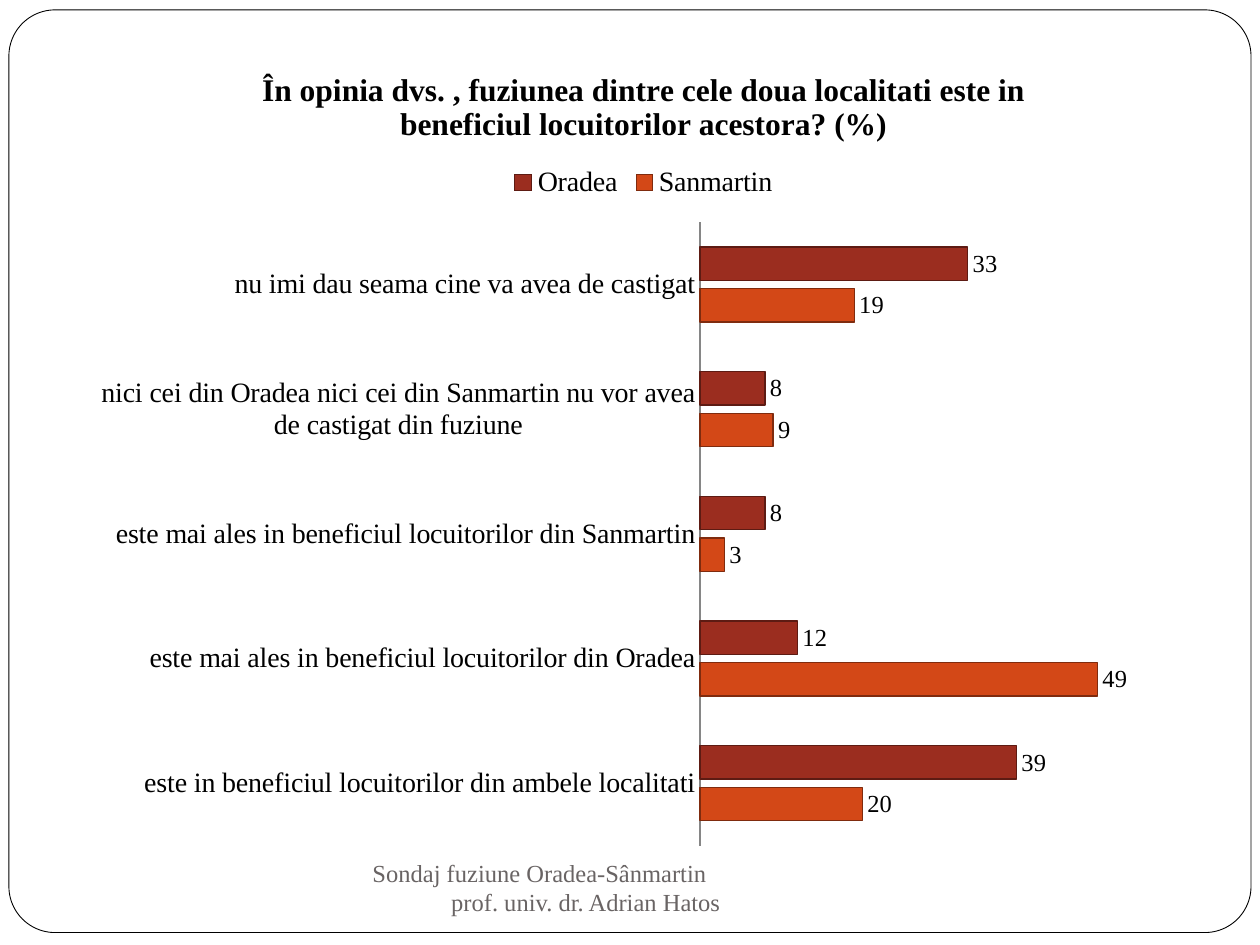
from lxml import etree
from pptx import Presentation
from pptx import util as u
from pptx.chart import data as chart_data
from pptx.dml.color import RGBColor
from pptx.enum import chart as ch
from pptx.enum import shapes, text
from pptx.oxml import ns

FONT = "Times New Roman"
BLACK = RGBColor(0x00, 0x00, 0x00)
WHITE = RGBColor(0xFF, 0xFF, 0xFF)
GREY = RGBColor(0x69, 0x64, 0x64)
AXIS_GREY = RGBColor(0x86, 0x86, 0x86)
ORANGE = RGBColor(0xD3, 0x48, 0x17)
DARK_ORANGE = RGBColor(0x7F, 0x2B, 0x0E)
RED = RGBColor(0x9B, 0x2D, 0x1F)
DARK_RED = RGBColor(0x5D, 0x1B, 0x13)

QUESTION = ("În opinia dvs. , fuziunea dintre cele doua localitati este in "
            "beneficiul locuitorilor acestora? (%)")
ANSWERS = [
    "este in beneficiul locuitorilor din ambele localitati",
    "este mai ales in beneficiul locuitorilor din Oradea",
    "este mai ales in beneficiul locuitorilor din Sanmartin",
    "nici cei din Oradea nici cei din Sanmartin nu vor avea de castigat din fuziune",
    "nu imi dau seama cine va avea de castigat",
]
TOWNS = [
    ("Sanmartin", [20, 49, 3, 9, 19], ORANGE, DARK_ORANGE),
    ("Oradea", [39, 12, 8, 8, 33], RED, DARK_RED),
]
CREDITS = [
    ("Sondaj fuziune Oradea-Sânmartin", text.PP_ALIGN.LEFT),
    ("prof. univ. dr. Adrian Hatos", text.PP_ALIGN.CENTER),
]


def set_font(font, size, color=BLACK, bold=False):
    font.name = FONT
    font.size = u.Pt(size)
    font.bold = bold
    font.color.rgb = color


def add_frame(slide, box):
    frame = slide.shapes.add_shape(shapes.MSO_SHAPE.ROUNDED_RECTANGLE, *box)
    frame.adjustments[0] = 0.05
    frame.shadow.inherit = False
    frame.fill.solid()
    frame.fill.fore_color.rgb = WHITE
    frame.line.color.rgb = BLACK
    frame.line.width = u.Pt(0.5)


def place_plot(chart, **fractions):
    plot_area = chart.plots[0]._element.getparent()
    for old in plot_area.findall(ns.qn("c:layout")):
        plot_area.remove(old)
    layout = etree.Element(ns.qn("c:layout"))
    manual = etree.SubElement(layout, ns.qn("c:manualLayout"))
    settings = {"layoutTarget": "inner", "xMode": "edge", "yMode": "edge", **fractions}
    for tag, value in settings.items():
        etree.SubElement(manual, ns.qn(f"c:{tag}")).set("val", str(value))
    plot_area.insert(0, layout)


def add_survey(slide, box):
    survey = chart_data.CategoryChartData(number_format="0")
    survey.categories = ANSWERS
    for town, shares, _, _ in TOWNS:
        survey.add_series(town, shares)
    chart = slide.shapes.add_chart(ch.XL_CHART_TYPE.BAR_CLUSTERED, *box, survey).chart
    set_font(chart.font, 10)

    question = chart.chart_title.text_frame.paragraphs[0].add_run()
    question.text = QUESTION
    set_font(question.font, 18, bold=True)
    chart.chart_title.include_in_layout = False

    chart.has_legend = True
    chart.legend.position = ch.XL_LEGEND_POSITION.TOP
    chart.legend.include_in_layout = False
    set_font(chart.legend.font, 16)

    answers = chart.category_axis
    answers.major_tick_mark = ch.XL_TICK_MARK.NONE
    answers.format.line.color.rgb = AXIS_GREY
    set_font(answers.tick_labels.font, 16)
    shares_axis = chart.value_axis
    shares_axis.minimum_scale = 0
    shares_axis.maximum_scale = 60
    shares_axis.has_major_gridlines = False
    shares_axis.visible = False

    bars = chart.plots[0]
    bars.vary_by_categories = False
    bars.gap_width = 150
    bars.overlap = -25
    for series, (_, _, fill, outline) in zip(bars.series, TOWNS):
        series.format.fill.solid()
        series.format.fill.fore_color.rgb = fill
        series.format.line.color.rgb = outline
        series.format.line.width = u.Pt(0.75)
        labels = series.data_labels
        labels.show_value = True
        labels.number_format = "0"
        labels.number_format_is_linked = False
        labels.position = ch.XL_LABEL_POSITION.OUTSIDE_END
        set_font(labels.font, 14)
    place_plot(chart, x=0.55, y=0.22, w=0.43, h=0.76)


def add_credits(slide, box):
    credits = slide.shapes.add_textbox(*box).text_frame
    credits.word_wrap = True
    credits.vertical_anchor = text.MSO_ANCHOR.MIDDLE
    for index, (wording, alignment) in enumerate(CREDITS):
        line = credits.add_paragraph() if index else credits.paragraphs[0]
        line.alignment = alignment
        run = line.add_run()
        run.text = wording
        set_font(run.font, 14, GREY)


def main():
    deck = Presentation()
    deck.slide_width, deck.slide_height = u.Cm(25.4), u.Cm(19.05)
    slide = deck.slides.add_slide(deck.slide_layouts[6])
    add_frame(slide, (u.Cm(0.18), u.Cm(0.2), u.Cm(25.04), u.Cm(18.6)))
    add_survey(slide, (u.Cm(1.57), u.Cm(0.84), u.Cm(22.81), u.Cm(16.54)))
    add_credits(slide, (u.Cm(7.26), u.Cm(17.25), u.Cm(9.1), u.Cm(1.27)))
    deck.save("out.pptx")


if __name__ == "__main__":
    main()
